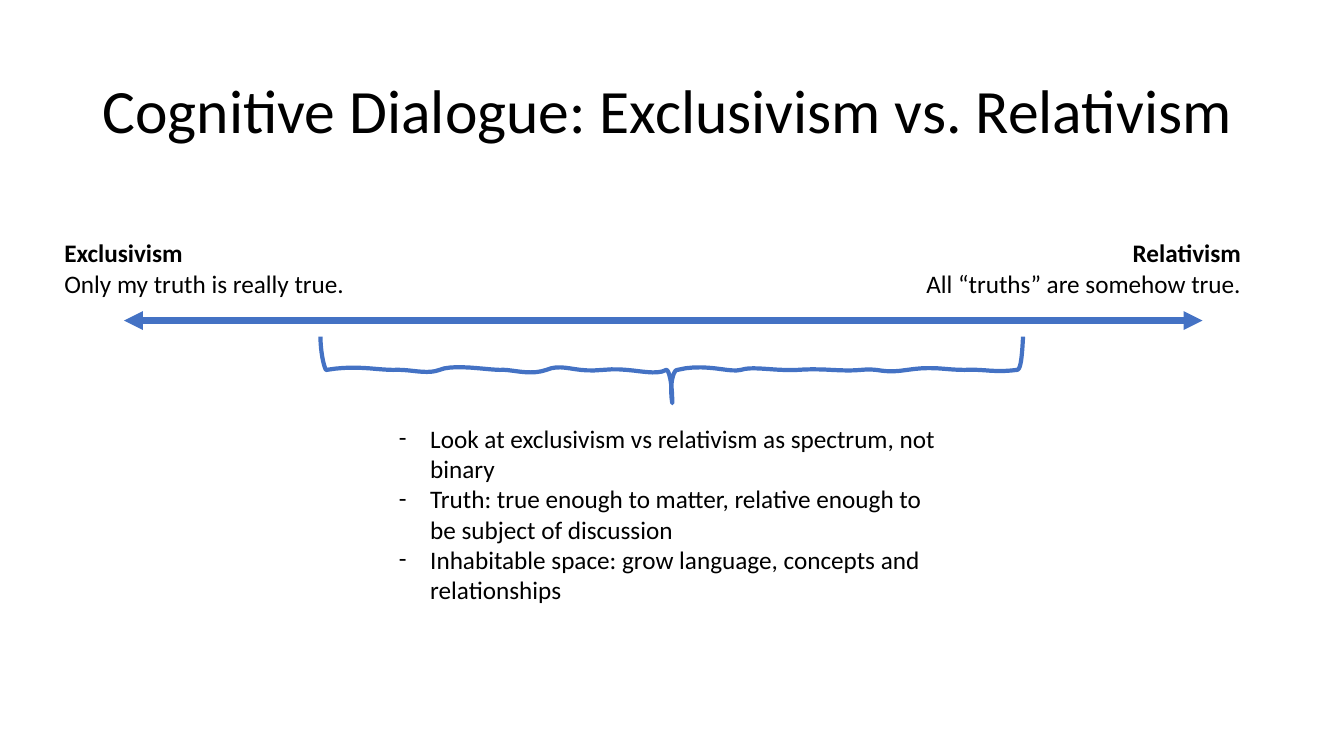
from lxml import etree
from pptx import Presentation
from pptx.dml.color import RGBColor
from pptx.enum.shapes import MSO_CONNECTOR
from pptx.enum.text import MSO_ANCHOR, MSO_AUTO_SIZE, PP_ALIGN
from pptx.oxml.ns import qn
from pptx.util import Inches, Pt

COLORS = {"text": "000000", "accent": "4472C4"}
ROWS = 75
COLS = ROWS * 16 / 9

# Brace outline in grid units: a start, then (control, control, end) per curve.
BRACE_START = (101.5, 33.4)
BRACE_CURVES = [
    ((101.4, 35.2), (101.3, 36.7), (100.9, 36.7)),
    ((98.6, 37), (97.7, 36.6), (95.7, 36.7)),
    ((93.6, 36.7), (92.7, 36.3), (90, 36.7)),
    ((87.4, 37.1), (87.4, 36.5), (85.4, 36.7)),
    ((83.5, 36.9), (81.7, 36.5), (79.1, 36.7)),
    ((76.6, 36.8), (74.7, 36.3), (73.5, 36.7)),
    ((72.3, 37), (70, 36), (67.2, 36.7)),
    ((66.8, 36.7), (66.4, 38.1), (66.7, 40)),
    ((66.7, 38.1), (66.4, 36.7), (66.1, 36.7)),
    ((64.8, 37.4), (62.7, 36.4), (59.8, 36.7)),
    ((56.9, 37), (55.9, 36), (54.2, 36.7)),
    ((52.5, 37.3), (50.7, 36.6), (49.6, 36.7)),
    ((48.4, 36.7), (45, 36.1), (43.6, 36.7)),
    ((42.3, 37.2), (40.7, 36.6), (39, 36.7)),
    ((37.3, 36.7), (35.3, 36.2), (32.4, 36.7)),
    ((32.3, 36.9), (31.8, 35.3), (31.8, 33.4)),
]


def bezier(p0, p1, p2, p3, steps=10):
    """Points along a cubic curve, without its start."""
    for i in range(1, steps + 1):
        t = i / steps
        u = 1 - t
        yield tuple(u**3 * a + 3 * u * u * t * b + 3 * u * t * t * c + t**3 * d
                    for a, b, c, d in zip(p0, p1, p2, p3))


class Slide:
    """Holds the style and the current slide; lengths are grid columns and rows."""

    font = "Calibri"

    def __init__(self, prs):
        self.cell_w = prs.slide_width / COLS
        self.cell_h = prs.slide_height / ROWS
        self.s = prs.slides.add_slide(prs.slide_layouts[6])

    def xy(self, col, row):
        return round(col * self.cell_w), round(row * self.cell_h)

    def stroke(self, line, width):
        line.color.rgb = RGBColor.from_string(COLORS["accent"])
        line.width = Pt(width)

    def run(self, p, text, size, bold=False):
        r = p.add_run()
        r.text = text
        r.font.name = self.font
        r.font.size = Pt(size)
        r.font.bold = bold
        r.font.color.rgb = RGBColor.from_string(COLORS["text"])

    def frame(self, col, row, cols, rows, grow=True):
        tf = self.s.shapes.add_textbox(*self.xy(col, row), *self.xy(cols, rows)).text_frame
        tf.word_wrap = True
        tf.auto_size = MSO_AUTO_SIZE.SHAPE_TO_FIT_TEXT if grow else MSO_AUTO_SIZE.NONE
        return tf

    def title(self, box, text):
        tf = self.frame(*box, grow=False)
        tf.vertical_anchor = MSO_ANCHOR.MIDDLE
        p = tf.paragraphs[0]
        p.line_spacing = 0.9
        self.run(p, text, 44)

    def label(self, box, head, text, align):
        p = self.frame(*box).paragraphs[0]
        p.alignment = align
        self.run(p, head, 18, bold=True)
        p.add_line_break()
        self.run(p, text, 18)

    def bullets(self, box, items, indent=Inches(0.31)):
        tf = self.frame(*box)
        for i, item in enumerate(items):
            p = tf.add_paragraph() if i else tf.paragraphs[0]
            self.run(p, item, 18)
            pPr = p._p.get_or_add_pPr()
            pPr.set("marL", str(indent))
            pPr.set("indent", str(-indent))
            etree.SubElement(pPr, qn("a:buFont"), typeface=self.font)
            etree.SubElement(pPr, qn("a:buChar"), char="-")

    def double_arrow(self, start, end):
        arrow = self.s.shapes.add_connector(
            MSO_CONNECTOR.STRAIGHT, *self.xy(*start), *self.xy(*end))
        self.stroke(arrow.line, 4.5)
        ln = arrow.line._get_or_add_ln()
        for tag in ("a:headEnd", "a:tailEnd"):
            etree.SubElement(ln, qn(tag), type="triangle")
        etree.SubElement(arrow._element.spPr, qn("a:effectLst"))

    def curve(self, start, curves):
        points, last = [], start
        for c1, c2, end in curves:
            points += [self.xy(*pt) for pt in bezier(last, c1, c2, end)]
            last = end
        builder = self.s.shapes.build_freeform(*self.xy(*start))
        builder.add_line_segments(points, close=False)
        sp = builder.convert_to_shape()
        sp.shadow.inherit = False
        sp.fill.background()
        self.stroke(sp.line, 3)


def main():
    prs = Presentation()
    prs.slide_width, prs.slide_height = Inches(40 / 3), Inches(7.5)
    s = Slide(prs)
    s.title((9.2, 4, 115, 14.5), "Cognitive Dialogue: Exclusivism vs. Relativism")
    s.double_arrow((12.3, 31.8), (119.3, 31.8))
    for col, head, text, align in (
        (5.4, "Exclusivism", "Only my truth is really true.", PP_ALIGN.LEFT),
        (87.1, "Relativism", "All “truths” are somehow true.", PP_ALIGN.RIGHT),
    ):
        s.label((col, 23.1, 37, 7.1), head, text, align)
    s.curve(BRACE_START, BRACE_CURVES)
    s.bullets((38.6, 41.5, 56.1, 22.2), (
        "Look at exclusivism vs relativism as spectrum, not binary",
        "Truth: true enough to matter, relative enough to be subject of discussion",
        "Inhabitable space: grow language, concepts and relationships",
    ))
    prs.save("out.pptx")


if __name__ == "__main__":
    main()
